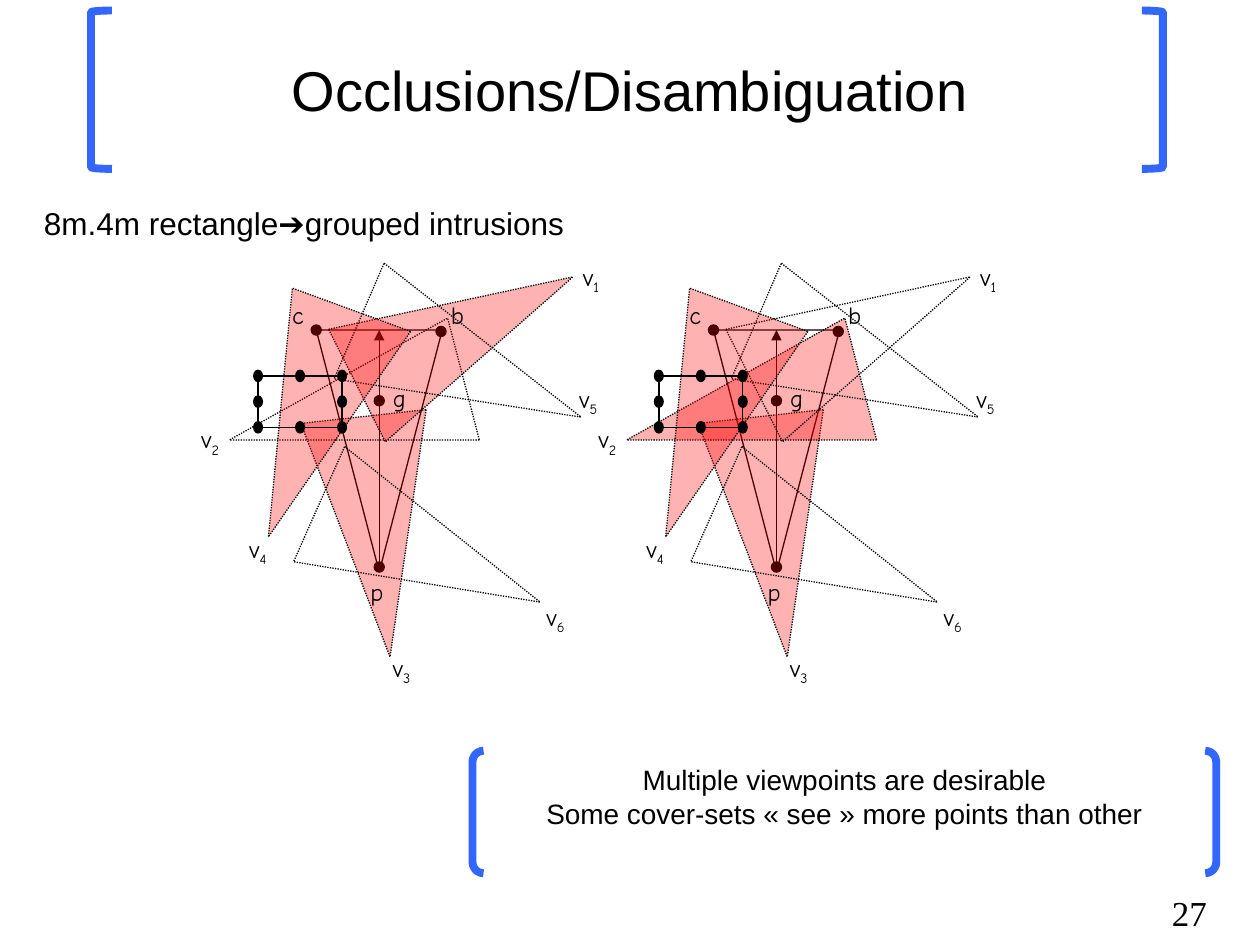
from lxml.etree import SubElement
from pptx import Presentation
from pptx.dml.color import RGBColor
from pptx.enum.dml import MSO_LINE
from pptx.enum.shapes import MSO_CONNECTOR, MSO_SHAPE
from pptx.enum.text import MSO_ANCHOR, PP_ALIGN
from pptx.oxml.ns import qn
from pptx.util import Pt

BLACK, WHITE, RED, BLUE = "000000", "FFFFFF", "FF0000", "3366FF"


def draw(parent, kind, left, top, width, height, fill=None, line=BLACK, weight=0.75):
    shape = parent.shapes.add_shape(kind, Pt(left), Pt(top), Pt(width), Pt(height))
    shape.shadow.inherit = False
    if fill:
        shape.fill.solid()
        shape.fill.fore_color.rgb = RGBColor.from_string(fill)
    else:
        shape.fill.background()
    shape.line.color.rgb = RGBColor.from_string(line)
    shape.line.width = Pt(weight)
    return shape


def write(shape, text, size, font="Arial", align=PP_ALIGN.LEFT, wrap=True):
    frame = shape.text_frame
    frame.word_wrap = wrap
    frame.text = text
    for paragraph in frame.paragraphs:
        paragraph.alignment = align
        for run in paragraph.runs:
            run.font.size = Pt(size)
            run.font.name = font
            run.font.color.rgb = RGBColor.from_string(BLACK)
    return frame


prs = Presentation()
prs.slide_width, prs.slide_height = Pt(720), Pt(540)
slide = prs.slides.add_slide(prs.slide_layouts[5])

draw(slide, MSO_SHAPE.LEFT_BRACKET, 52, 6, 12, 90.5, WHITE, BLUE, 4.5)
draw(slide, MSO_SHAPE.RIGHT_BRACKET, 652.5, 6, 12, 90.5, WHITE, BLUE, 4.5)
page_number = slide.shapes.add_textbox(Pt(662.5), Pt(506), Pt(38), Pt(31))
write(page_number, "27", 20, "Times New Roman", wrap=False)

title = slide.shapes.title
title.left, title.top, title.width, title.height = Pt(54), Pt(6), Pt(612), Pt(90)
write(title, "Occlusions/Disambiguation", 32, align=PP_ALIGN.CENTER)
title.text_frame.vertical_anchor = MSO_ANCHOR.MIDDLE

landmarks = {"g": (216.7, 229), "p": (216.7, 324), "b": (252, 189.4), "c": (180.7, 188.6)}
views = {
    "v3": (179.3, 237.6, 173.7),
    "v2": (162, 164.9, 255.4),
    "v1": (229.7, 120.2, 63.3),
    "v6": (209.5, 247, 113.9),
    "v5": (232.6, 141.8, 113.4),
    "v4": (141.1, 172.8, 200.1),
}
labels = {
    "g": (217.4, 215.3), "p": (204.5, 326.2), "b": (250.6, 167.8), "c": (159.8, 167.8),
    "v1": (326.2, 146.2), "v2": (108, 239), "v3": (217.4, 369.4),
    "v4": (135.4, 301.7), "v5": (324, 216), "v6": (305.3, 340.6),
}
cover_sets = [{"v1", "v3", "v4"}, {"v2", "v3", "v4"}]
DIAGRAM_STEP, RECTANGLE_STEP = 227, 229
VIEW_WIDTH, VIEW_HEIGHT = 72, 138.2
LANDMARK = 5.8

for index, cover_set in enumerate(cover_sets):
    shift = index * DIAGRAM_STEP
    field = draw(slide, MSO_SHAPE.ISOSCELES_TRIANGLE, 180.7 + shift, 188.6,
                 VIEW_WIDTH, VIEW_HEIGHT)
    field.rotation = 180
    for x, y in landmarks.values():
        draw(slide, MSO_SHAPE.OVAL, x + shift - LANDMARK / 2, y - LANDMARK / 2,
             LANDMARK, LANDMARK, BLACK)

    axis = slide.shapes.add_connector(MSO_CONNECTOR.STRAIGHT, Pt(216.7 + shift), Pt(188.6),
                                      Pt(216.7 + shift), Pt(324.7))
    axis.line.color.rgb = RGBColor.from_string(BLACK)
    axis.line.width = Pt(0.75)
    SubElement(axis.line._get_or_add_ln(), qn("a:headEnd"), type="triangle")
    SubElement(axis._element.spPr, qn("a:effectLst"))

    for name, (left, top, angle) in views.items():
        view = draw(slide, MSO_SHAPE.ISOSCELES_TRIANGLE, left + shift, top,
                    VIEW_WIDTH, VIEW_HEIGHT, RED if name in cover_set else None)
        view.rotation = angle
        view.line.dash_style = MSO_LINE.ROUND_DOT
        if name in cover_set:
            color = view._element.spPr.find(qn("a:solidFill"))[0]
            SubElement(color, qn("a:alpha"), val="30000")

    for name, (left, top) in labels.items():
        label = slide.shapes.add_textbox(Pt(left + shift), Pt(top),
                                         Pt(26.6 if name in views else 22.3), Pt(23.8))
        frame = write(label, name[0], 14, "Comic Neue", wrap=False)
        if name in views:
            subscript = frame.paragraphs[0].add_run()
            subscript.text = name[1]
            subscript.font.size = Pt(14)
            subscript.font.name = "Comic Neue"
            subscript.font.color.rgb = RGBColor.from_string(BLACK)
            subscript._r.get_or_add_rPr().set("baseline", "-25000")

for index in range(len(cover_sets)):
    left, top = 147.5 + index * RECTANGLE_STEP, 214.8
    intrusions = slide.shapes.add_group_shape()
    draw(intrusions, MSO_SHAPE.RECTANGLE, left, top, 48, 29.4)
    for row in range(3):
        for column in range(3):
            if (row, column) != (1, 1):
                draw(intrusions, MSO_SHAPE.OVAL, left + column * 24 - 2.5,
                     top + row * 14.7 - 3.25, 5, 6.5, BLACK)

caption = slide.shapes.add_textbox(Pt(18), Pt(113), Pt(512.6), Pt(29))
write(caption, "8m.4m rectangle➔grouped intrusions", 18)

conclusion = draw(slide, MSO_SHAPE.DOUBLE_BRACKET, 270, 429, 425, 70, WHITE, BLUE, 4.5)
conclusion.adjustments[0] = 0.09
frame = write(conclusion, "Multiple viewpoints are desirable\n"
              "Some cover-sets « see » more points than other", 16, align=PP_ALIGN.CENTER)
frame.vertical_anchor = MSO_ANCHOR.TOP
frame.margin_top = Pt(5)

prs.save("out.pptx")
